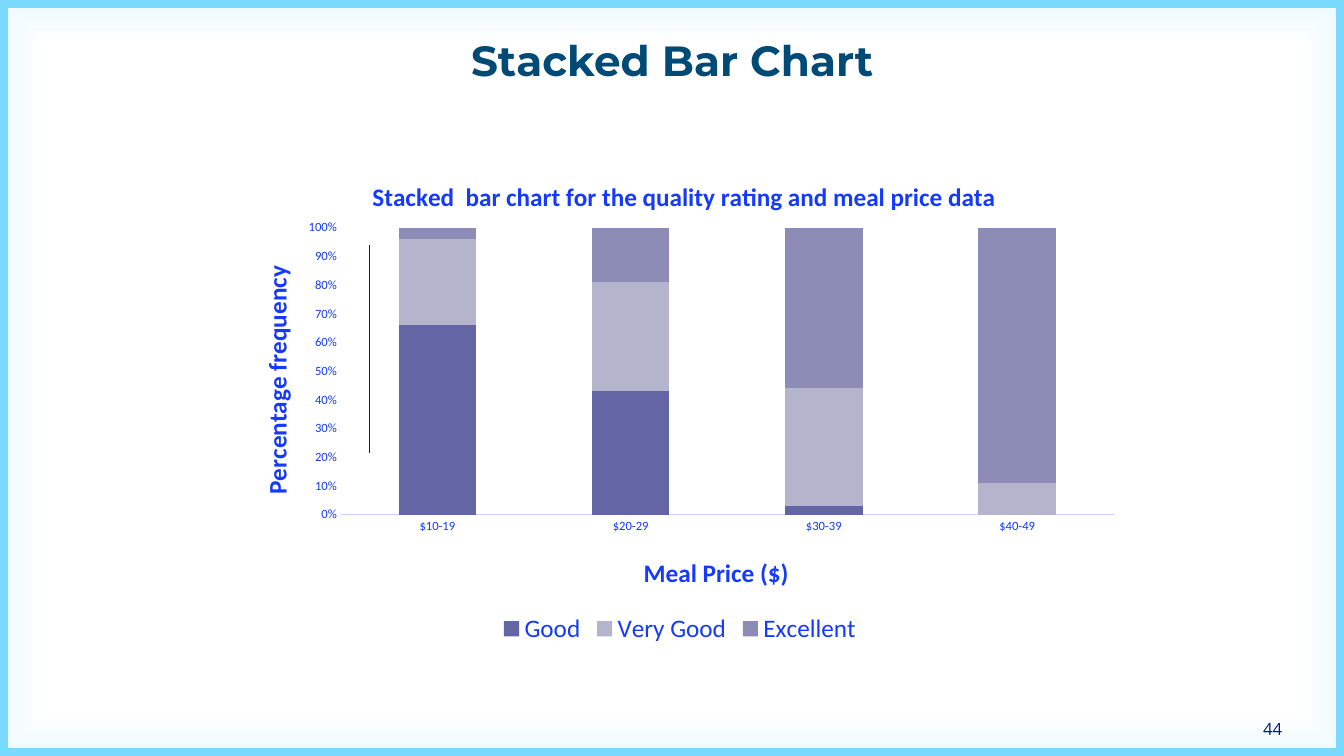
from lxml.etree import SubElement
from pptx import Presentation
from pptx.chart.data import CategoryChartData
from pptx.dml.color import RGBColor
from pptx.enum.chart import XL_CHART_TYPE, XL_LEGEND_POSITION, XL_TICK_MARK
from pptx.enum.shapes import MSO_CONNECTOR
from pptx.enum.text import MSO_ANCHOR, PP_ALIGN
from pptx.oxml.ns import qn
from pptx.util import Pt

COLORS = {
    "heading": "004A78",
    "navy": "011892",
    "chart_text": "153AFD",
    "axis_line": "C9D1FF",
}
BACKDROP = [(88, "FFFFFF"), (98, "F0FBFF"), (98, "79D9FF"), (100, "79D9FF"), (100, "A6E6FF")]
HEADING = "Stacked Bar Chart"
PAGE = "44"
CHART_TITLE = "Stacked  bar chart for the quality rating and meal price data"
PRICE_TITLE = "Meal Price ($)"
FREQUENCY_TITLE = "Percentage frequency"
PRICES = ["$10-19", "$20-29", "$30-39", "$40-49"]
RATINGS = [
    ("Good", (66, 43, 3, 0), "6465A4"),
    ("Very Good", (30, 38, 41, 11), "B4B5CD"),
    ("Excellent", (4, 19, 56, 89), "8C8CB6"),
]


def style(font, size, color, name="Calibri", bold=False):
    font.size, font.name, font.bold = Pt(size), name, bold
    font.color.rgb = RGBColor.from_string(color)


def write(frame, text, align=None, spacing=None, **look):
    paragraph = frame.paragraphs[0]
    paragraph.alignment, paragraph.line_spacing = align, spacing
    run = paragraph.add_run()
    run.text = text
    style(run.font, **look)


def add_text(slide, box, text, anchor, bottom=0, **look):
    frame = slide.shapes.add_textbox(*map(Pt, box)).text_frame
    frame.word_wrap = True
    frame.vertical_anchor = anchor
    frame.margin_left = frame.margin_right = frame.margin_top = 0
    frame.margin_bottom = Pt(bottom)
    write(frame, text, **look)


def place(part, index, inner=False, **fractions):
    for old in part.findall(qn("c:layout")):
        part.remove(old)
    layout = SubElement(part, qn("c:layout"))
    part.insert(index, layout)
    manual = SubElement(layout, qn("c:manualLayout"))
    settings = {"layoutTarget": "inner"} if inner else {}
    settings |= {"xMode": "edge", "yMode": "edge"} | fractions
    for tag, value in settings.items():
        SubElement(manual, qn(f"c:{tag}")).set("val", str(value))


def paint_backdrop(slide):
    slide.background.fill.solid()
    properties = slide._element.find(".//" + qn("p:bgPr"))
    properties.remove(properties[0])
    gradient = SubElement(properties, qn("a:gradFill"), rotWithShape="1")
    properties.insert(0, gradient)
    stops = SubElement(gradient, qn("a:gsLst"))
    for percent, color in BACKDROP:
        stop = SubElement(stops, qn("a:gs"), pos=str(percent * 1000))
        SubElement(stop, qn("a:srgbClr"), val=color)
    focus = SubElement(gradient, qn("a:path"), path="shape")
    SubElement(focus, qn("a:fillToRect"), dict.fromkeys("ltrb", "50000"))


def add_ratings_chart(slide):
    data = CategoryChartData()
    data.categories = PRICES
    for rating, shares, _ in RATINGS:
        data.add_series(rating, shares)
    chart = slide.shapes.add_chart(
        XL_CHART_TYPE.COLUMN_STACKED_100, Pt(162.7), Pt(110.9), Pt(645.8), Pt(352.8), data
    ).chart
    style(chart.font, 10, COLORS["navy"])

    plot = chart.plots[0]
    plot.gap_width, plot.overlap, plot.vary_by_categories = 150, 100, False
    for series, (_, _, color) in zip(plot.series, RATINGS):
        series.format.fill.solid()
        series.format.fill.fore_color.rgb = RGBColor.from_string(color)

    price_axis, frequency_axis = chart.category_axis, chart.value_axis
    for axis in (price_axis, frequency_axis):
        axis.has_major_gridlines = False
        axis.major_tick_mark = axis.minor_tick_mark = XL_TICK_MARK.NONE
        style(axis.tick_labels.font, 9, COLORS["chart_text"])
    price_axis.format.line.color.rgb = RGBColor.from_string(COLORS["axis_line"])
    price_axis.format.line.width = Pt(0.75)
    frequency_axis.format.line.fill.background()
    frequency_axis.maximum_scale, frequency_axis.major_unit = 1, 0.1
    frequency_axis.tick_labels.number_format = "0%"
    frequency_axis.tick_labels.number_format_is_linked = False

    titles = [
        (chart.chart_title, CHART_TITLE, 0.155, 0.04),
        (price_axis.axis_title, PRICE_TITLE, 0.455, 0.8),
        (frequency_axis.axis_title, FREQUENCY_TITLE, 0.03, 0.215),
    ]
    for title, text, x, y in titles:
        write(title.text_frame, text, size=18, color=COLORS["chart_text"], bold=True)
        place(title._element, 1, x=x, y=y)
    frequency_axis.axis_title.text_frame._txBody.bodyPr.set("rot", "-5400000")
    place(plot._element.getparent(), 0, inner=True, x=0.125, y=0.147, w=0.855, h=0.581)

    chart.has_legend = True
    chart.legend.position = XL_LEGEND_POSITION.BOTTOM
    chart.legend.include_in_layout = False
    style(chart.legend.font, 18, COLORS["chart_text"])


def add_rule(slide):
    rule = slide.shapes.add_connector(
        MSO_CONNECTOR.STRAIGHT, Pt(263.5), Pt(175), Pt(263.5), Pt(323.3)
    )
    rule.line.color.rgb = RGBColor.from_string(COLORS["navy"])
    rule.line.width = Pt(0.5)
    SubElement(rule._element.spPr, qn("a:effectLst"))


def main():
    deck = Presentation()
    deck.slide_width, deck.slide_height = Pt(960), Pt(540)
    slide = deck.slides.add_slide(deck.slide_layouts[6])
    paint_backdrop(slide)
    add_text(slide, (902.2, 513.4, 43.2, 18), PAGE, MSO_ANCHOR.BOTTOM, bottom=3.6,
             size=12, color=COLORS["navy"], name="Open Sans")
    add_text(slide, (66.2, 28.8, 828, 53.3), HEADING, MSO_ANCHOR.TOP,
             align=PP_ALIGN.CENTER, spacing=0.9, size=30.1,
             color=COLORS["heading"], name="Montserrat", bold=True)
    add_ratings_chart(slide)
    add_rule(slide)
    deck.save("out.pptx")


if __name__ == "__main__":
    main()
